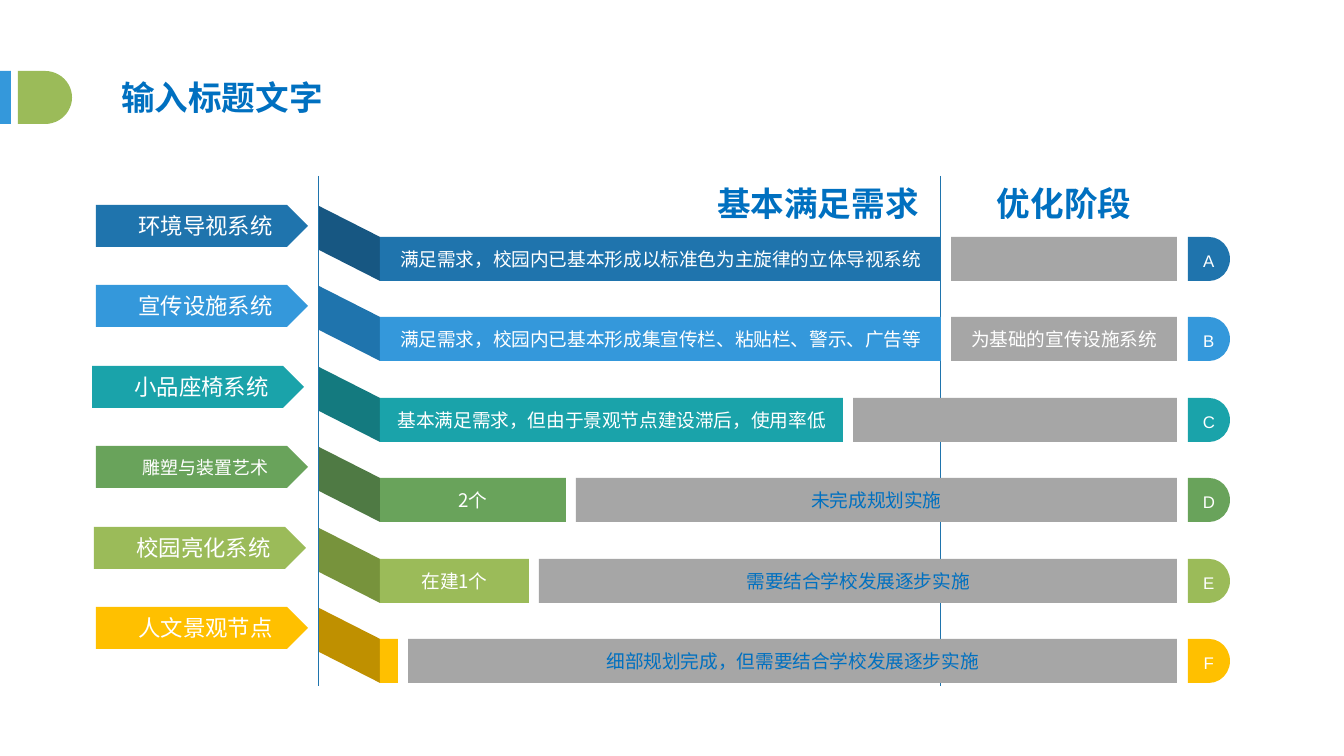
from pptx import Presentation
from pptx import util as u
from pptx.dml.color import RGBColor
from pptx.enum import shapes, text
from pptx.oxml import ns
from lxml import etree

PX = 914400 / 134.4
ROW_PITCH = 80.4
BAR_H, GAP = 44, 10
CJK = "Noto Sans CJK SC"

WHITE = RGBColor(0xFF, 0xFF, 0xFF)
GRAY = RGBColor(0xA6, 0xA6, 0xA6)
TITLE_BLUE = RGBColor(0x00, 0x70, 0xC0)
NAVY = RGBColor(0x1F, 0x74, 0xAD)
DARK_NAVY = RGBColor(0x17, 0x57, 0x82)
SKY = RGBColor(0x34, 0x98, 0xDB)
TEAL = RGBColor(0x1A, 0xA3, 0xAA)
DARK_TEAL = RGBColor(0x14, 0x7A, 0x7F)
GREEN = RGBColor(0x69, 0xA3, 0x5B)
DARK_GREEN = RGBColor(0x4F, 0x7A, 0x44)
LIME = RGBColor(0x9B, 0xBB, 0x59)
OLIVE = RGBColor(0x77, 0x93, 0x3C)
GOLD = RGBColor(0xFF, 0xC0, 0x00)
DARK_GOLD = RGBColor(0xBF, 0x90, 0x00)

ROWS = [
    ("A", "环境导视系统", 96, 12, NAVY, DARK_NAVY, 561,
     "满足需求，校园内已基本形成以标准色为主旋律的立体导视系统", "", WHITE),
    ("B", "宣传设施系统", 96, 12, SKY, NAVY, 561,
     "满足需求，校园内已基本形成集宣传栏、粘贴栏、警示、广告等", "为基础的宣传设施系统", WHITE),
    ("C", "小品座椅系统", 92, 12, TEAL, DARK_TEAL, 463,
     "基本满足需求，但由于景观节点建设滞后，使用率低", "", WHITE),
    ("D", "雕塑与装置艺术", 96, 9.6, GREEN, DARK_GREEN, 186,
     "2个", "未完成规划实施", TITLE_BLUE),
    ("E", "校园亮化系统", 94, 12, LIME, OLIVE, 149,
     "在建1个", "需要结合学校发展逐步实施", TITLE_BLUE),
    ("F", "人文景观节点", 96, 12, GOLD, DARK_GOLD, 18,
     "", "细部规划完成，但需要结合学校发展逐步实施", TITLE_BLUE),
]


def px(n):
    """Turn px into EMU."""
    return u.Emu(round(n * PX))


def paint(sp, color):
    """Give a shape a flat fill with no line and no shadow."""
    sp.shadow.inherit = False
    sp.fill.solid()
    sp.fill.fore_color.rgb = color
    sp.line.fill.background()
    return sp


def write(sp, content, size=10, color=WHITE, font=CJK, bold=False,
          align=text.PP_ALIGN.CENTER, anchor=text.MSO_ANCHOR.MIDDLE,
          left=0, top=0, spacing=None):
    """Put one formatted line of text in a shape."""
    tf = sp.text_frame
    tf.word_wrap = True
    tf.vertical_anchor = anchor
    tf.margin_left, tf.margin_top = px(left), px(top)
    tf.margin_right = tf.margin_bottom = 0
    p = tf.paragraphs[0]
    p.alignment = align
    if spacing:
        p.line_spacing = spacing
    r = p.add_run()
    r.text = content
    r.font.size, r.font.bold, r.font.name = u.Pt(size), bold, font
    r.font.color.rgb = color
    ea = etree.SubElement(r.font._element, ns.qn("a:ea"))
    ea.set("typeface", font)


def block(s, kind, x, y, w, h, color):
    """Add a painted preset shape."""
    return paint(s.shapes.add_shape(kind, px(x), px(y), px(w), px(h)), color)


def heading(s, content, x, y, w, h):
    """Add a bold blue heading."""
    sp = s.shapes.add_textbox(px(x), px(y), px(w), px(h))
    write(sp, content, size=18, color=TITLE_BLUE, bold=True, left=13, top=7,
          align=text.PP_ALIGN.LEFT, anchor=text.MSO_ANCHOR.TOP)


def title_band(s, x, y, h):
    """Draw the marker at the slide edge and the title beside it."""
    block(s, shapes.MSO_SHAPE.RECTANGLE, x, y, 11, h, SKY)
    block(s, shapes.MSO_SHAPE.FLOWCHART_DELAY, x + 18, y, 54, h, LIME)
    heading(s, "输入标题文字", x + 108, y - 1, 384, h + 1)


def divider(s, x, y, h):
    """Draw a thin vertical line."""
    line = s.shapes.add_connector(shapes.MSO_CONNECTOR.STRAIGHT,
                                  px(x), px(y), px(x), px(y + h))
    line.line.color.rgb = NAVY
    line.line.width = u.Pt(0.5)
    etree.SubElement(line._element.spPr, ns.qn("a:effectLst"))


def bar(s, x, y, w, color, content, text_color):
    """Draw a progress bar with its optional label."""
    sp = block(s, shapes.MSO_SHAPE.RECTANGLE, x, y, w, BAR_H, color)
    if content:
        write(sp, content, color=text_color)


def system_row(s, y, row):
    """Draw one system: tag, fold, two bars and badge."""
    letter, name, tag_x, size, color, shade, done_w, done, todo, todo_color = row
    block(s, shapes.MSO_SHAPE.PENTAGON, tag_x, y, 212, 42, color)
    sp = s.shapes.add_textbox(px(tag_x + 28), px(y + 1), px(163), px(40))
    write(sp, name, size=size)

    fold = s.shapes.build_freeform(319, y + 1, scale=PX)
    fold.add_line_segments([(380, y + 32), (380, y + 32 + BAR_H), (319, y + 1 + BAR_H)])
    paint(fold.convert_to_shape(), shade)

    bar_y, todo_x = y + 32, 380 + done_w + GAP
    bar(s, 380, bar_y, done_w, color, done, WHITE)
    bar(s, todo_x, bar_y, 1177 - todo_x, GRAY, todo, todo_color)

    badge = block(s, shapes.MSO_SHAPE.FLOWCHART_DELAY, 1188, bar_y, 42, BAR_H, color)
    write(badge, letter, size=9, font="Arial", left=6, spacing=1.2)


def chart_area(s, x, y, h):
    """Draw the dividers, the stage headings and all system rows."""
    for line_x in (x, x + 622):
        divider(s, line_x, y, h)
    heading(s, "基本满足需求", x + 385, y, 237, 54)
    heading(s, "优化阶段", x + 665, y, 173, 54)
    for i, row in enumerate(ROWS):
        system_row(s, y + 29 + round(i * ROW_PITCH), row)


def main():
    """Build and save the slide."""
    prs = Presentation()
    prs.slide_width, prs.slide_height = px(1344), px(756)
    s = prs.slides.add_slide(prs.slide_layouts[6])
    title_band(s, 0, 71, 53)
    chart_area(s, 319, 176, 510)
    prs.save("out.pptx")


if __name__ == "__main__":
    main()
